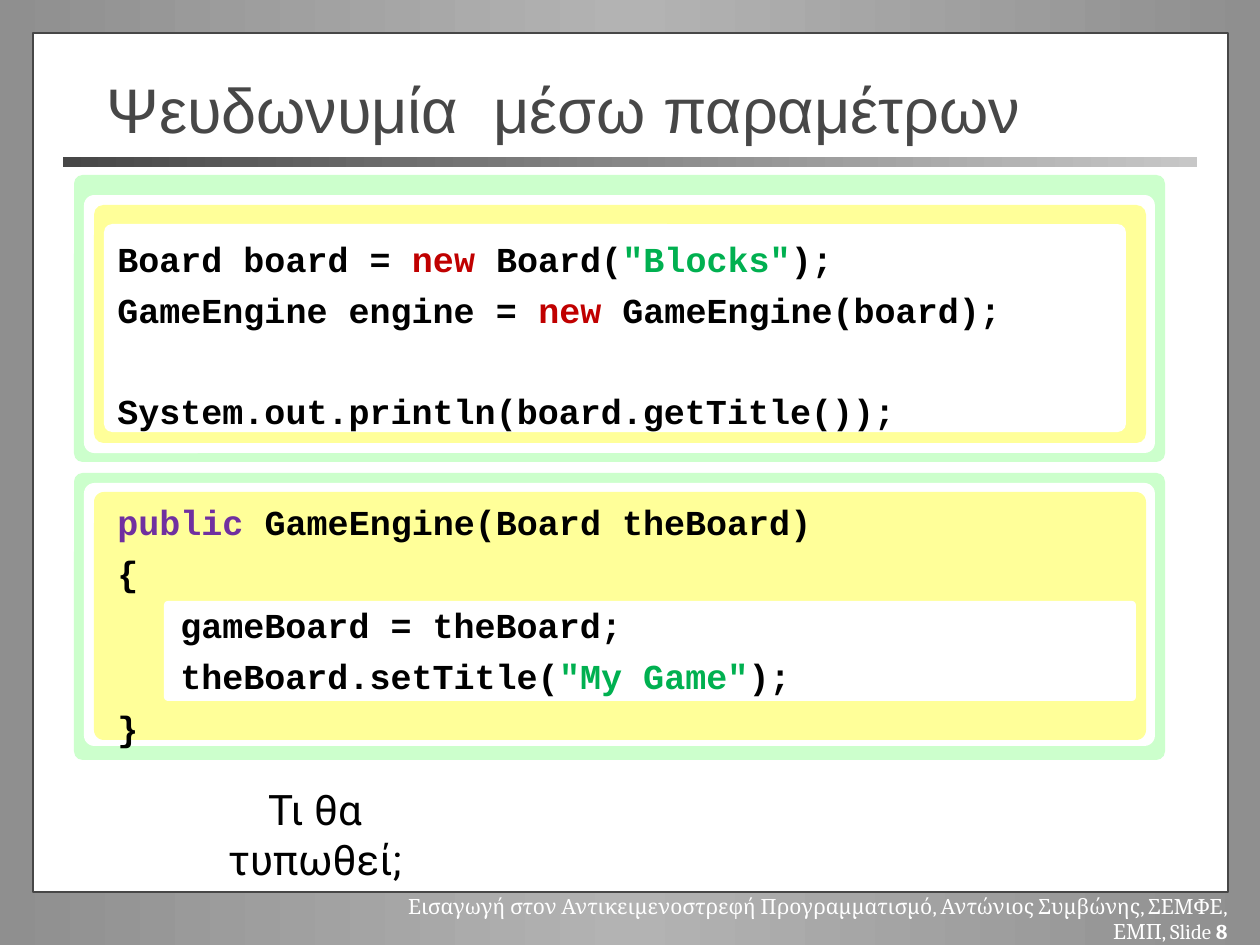
from copy import deepcopy
from dataclasses import dataclass

from pptx import Presentation
from pptx.dml.color import RGBColor
from pptx.enum.shapes import MSO_SHAPE
from pptx.enum.text import MSO_ANCHOR, MSO_AUTO_SIZE, PP_ALIGN
from pptx.oxml.ns import qn
from pptx.util import Emu, Pt

EMU_PER_PX = 914400 / 126
COLORS = {
    "white": "FFFFFF", "black": "000000", "dark": "474747", "light": "C7C7C7",
    "edge": "8F8F8F", "middle": "B3B3B3", "green": "CCFFCC", "yellow": "FFFF99",
    "new": "C00000", "string": "00B050", "keyword": "7030A0",
}
CODE_SPACE = 5.4
CODE_LINE = 28
CODE_INDENT = 63


@dataclass(frozen=True)
class Box:
    left: int
    top: int
    width: int
    height: int


@dataclass(frozen=True)
class Layer:
    box: Box
    color: str
    corner: float


@dataclass(frozen=True)
class Run:
    text: str
    color: str = "black"
    bold: bool = True


@dataclass(frozen=True)
class Line:
    runs: tuple[Run, ...]
    indent: int = 0
    blank_before: int = 0


@dataclass(frozen=True)
class CodePanel:
    layers: tuple[Layer, ...]
    text_box: Box
    lines: tuple[Line, ...]


PANELS = (
    CodePanel(
        (Layer(Box(74, 473, 1091, 287), "green", 0.03),
         Layer(Box(84, 483, 1071, 263), "white", 0.04),
         Layer(Box(94, 492, 1052, 248), "yellow", 0.04),
         Layer(Box(164, 601, 972, 100), "white", 0.04)),
        Box(105, 494, 1061, 257),
        (Line((Run("public ", "keyword"), Run("GameEngine(Board theBoard)"))),
         Line((Run("{"),)),
         Line((Run("gameBoard = theBoard;"),), indent=CODE_INDENT),
         Line((Run("theBoard.setTitle("), Run('"My Game"', "string"), Run(");")),
              indent=CODE_INDENT),
         Line((Run("}"),))),
    ),
    CodePanel(
        (Layer(Box(74, 175, 1091, 287), "green", 0.03),
         Layer(Box(84, 195, 1071, 258), "white", 0.04),
         Layer(Box(94, 205, 1052, 238), "yellow", 0.04),
         Layer(Box(104, 224, 1022, 208), "white", 0.04)),
        Box(105, 231, 1061, 207),
        (Line((Run("Board board = "), Run("new", "new"), Run(" Board("),
               Run('"Blocks"', "string"), Run(");"))),
         Line((Run("GameEngine engine = "), Run("new ", "new"),
               Run("GameEngine(board);"))),
         Line((Run("System.out.println(board.getTitle());"),), blank_before=1)),
    ),
)


def px(n: int) -> Emu:
    return Emu(round(n * EMU_PER_PX))


def rgb(name: str) -> RGBColor:
    return RGBColor.from_string(COLORS[name])


def place(sp, box: Box) -> None:
    sp.left, sp.top = px(box.left), px(box.top)
    sp.width, sp.height = px(box.width), px(box.height)


def set_gradient(fill, owner, names: tuple[str, ...]) -> None:
    """Fill evenly from left to right; owner is the XML element holding the fill."""
    fill.gradient()
    fill.gradient_angle = 0
    stops = next(owner.iter(qn("a:gsLst")))
    while len(stops) < len(names):
        stops.append(deepcopy(stops[0]))
    for i, (stop, name) in enumerate(zip(fill.gradient_stops, names)):
        stop.color.rgb = rgb(name)
        stop.position = i / (len(names) - 1)


def add_panel(s, box: Box, color: str = "white", corner: float = 0):
    kind = MSO_SHAPE.ROUNDED_RECTANGLE if corner else MSO_SHAPE.RECTANGLE
    sp = s.shapes.add_shape(kind, 0, 0, 0, 0)
    place(sp, box)
    if corner:
        sp.adjustments[0] = corner
    sp.shadow.inherit = False
    sp.fill.solid()
    sp.fill.fore_color.rgb = rgb(color)
    sp.line.fill.background()
    return sp


def write(sp, lines: tuple[Line, ...], *, font: str, size: int,
          align=PP_ALIGN.LEFT, anchor=MSO_ANCHOR.TOP, space: float = 0) -> None:
    tf = sp.text_frame
    tf.word_wrap = True
    tf.auto_size = MSO_AUTO_SIZE.NONE
    tf.vertical_anchor = anchor
    for i, line in enumerate(lines):
        p = tf.add_paragraph() if i else tf.paragraphs[0]
        p.alignment = align
        p.space_before = Pt(space + line.blank_before * CODE_LINE)
        if line.indent:
            p._p.get_or_add_pPr().set("marL", str(px(line.indent)))
        for run in line.runs:
            r = p.add_run()
            r.text = run.text
            r.font.name, r.font.size, r.font.bold = font, Pt(size), run.bold
            r.font.color.rgb = rgb(run.color)


def add_text(s, box: Box, lines: tuple[Line, ...], **style) -> None:
    sp = s.shapes.add_textbox(0, 0, 0, 0)
    place(sp, box)
    write(sp, lines, **style)


def add_code_panel(s, panel: CodePanel) -> None:
    for layer in panel.layers:
        add_panel(s, layer.box, layer.color, layer.corner)
    add_text(s, panel.text_box, panel.lines,
             font="Courier New", size=20, space=CODE_SPACE)


def main() -> None:
    prs = Presentation()
    prs.slide_width, prs.slide_height = px(1260), px(945)
    s = prs.slides.add_slide(prs.slide_layouts[5])
    set_gradient(s.background.fill, s._element, ("edge", "middle", "edge"))

    page = add_panel(s, Box(33, 33, 1195, 859))
    page.line.color.rgb = rgb("dark")
    page.line.width = Pt(1)
    rule = add_panel(s, Box(63, 157, 1134, 10))
    set_gradient(rule.fill, rule._element, ("dark", "light"))

    title = s.shapes.title
    s.shapes._spTree.append(title._element)  # bring in front of the page
    place(title, Box(94, 69, 1071, 78))
    write(title, (Line((Run("Ψευδωνυμία  μέσω παραμέτρων", "dark", False),)),),
          font="Arial", size=36, anchor=MSO_ANCHOR.MIDDLE)

    for panel in PANELS:
        add_code_panel(s, panel)

    add_text(s, Box(168, 777, 294, 110),
             (Line((Run("Τι θα τυπωθεί;", bold=False),)),),
             font="Roboto", size=24, align=PP_ALIGN.CENTER, space=5)
    footer = ("Εισαγωγή στον Αντικειμενοστρεφή Προγραμματισμό, "
              "Αντώνιος Συμβώνης, ΣΕΜΦΕ, ΕΜΠ, Slide ")
    add_text(s, Box(358, 887, 882, 58),
             (Line((Run(footer, "white", False), Run("8", "white"))),),
             font="Cambria", size=12, align=PP_ALIGN.RIGHT)
    prs.save("out.pptx")


if __name__ == "__main__":
    main()
